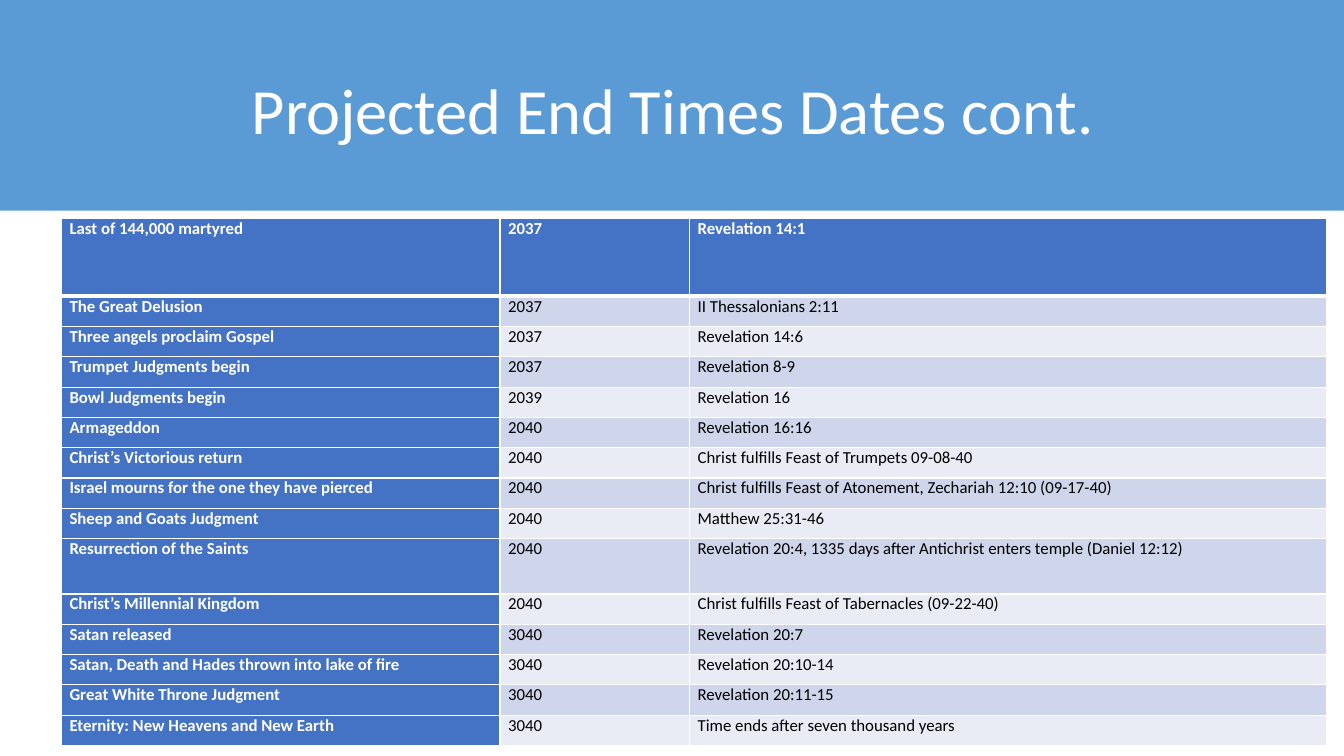
from lxml import etree
from pptx import Presentation
from pptx import util as u
from pptx.dml.color import RGBColor
from pptx.enum import shapes, text
from pptx.oxml import ns

WHITE, BLACK, SKY, BLUE = "FFFFFF", "000000", "5B9BD5", "4472C4"
BANDS = ("E9EBF5", "CFD5EA")
COLS = (4.35, 1.88, 6.32)
TALL = {0: 0.77, 9: 0.55}  # rows higher than the rest
EVENTS = [
    ("Last of 144,000 martyred", "2037", "Revelation 14:1"),
    ("The Great Delusion", "2037", "II Thessalonians 2:11"),
    ("Three angels proclaim Gospel", "2037", "Revelation 14:6"),
    ("Trumpet Judgments begin", "2037", "Revelation 8-9"),
    ("Bowl Judgments begin", "2039", "Revelation 16"),
    ("Armageddon", "2040", "Revelation 16:16"),
    ("Christ’s Victorious return", "2040", "Christ fulfills Feast of Trumpets 09-08-40"),
    ("Israel mourns for the one they have pierced", "2040",
     "Christ fulfills Feast of Atonement, Zechariah 12:10 (09-17-40)"),
    ("Sheep and Goats Judgment", "2040", "Matthew 25:31-46"),
    ("Resurrection of the Saints", "2040",
     "Revelation 20:4, 1335 days after Antichrist enters temple (Daniel 12:12)"),
    ("Christ’s Millennial Kingdom", "2040", "Christ fulfills Feast of Tabernacles (09-22-40)"),
    ("Satan released", "3040", "Revelation 20:7"),
    ("Satan, Death and Hades thrown into lake of fire", "3040", "Revelation 20:10-14"),
    ("Great White Throne Judgment", "3040", "Revelation 20:11-15"),
    ("Eternity: New Heavens and New Earth", "3040", "Time ends after seven thousand years"),
]


def paint(obj, color):
    """Give a fill or a font a solid colour."""
    if hasattr(obj, "solid"):
        obj.solid()
        obj.fore_color.rgb = RGBColor.from_string(color)
    else:
        obj.color.rgb = RGBColor.from_string(color)


def assign(obj, vals):
    for key, val in vals.items():
        setattr(obj, key, val)


def place(box):
    return dict(zip(("left", "top", "width", "height"), map(u.Inches, box)))


def write(frame, words, size, color, bold=False):
    frame.text = words
    font = frame.paragraphs[0].runs[0].font
    assign(font, {"name": "Calibri", "size": u.Pt(size), "bold": bold})
    paint(font, color)


def edge(cell, row):
    """White cell borders, thicker below the first row."""
    wide = {(0, "lnB"): 3, (1, "lnT"): 3}
    props = cell._tc.get_or_add_tcPr()
    for pos, side in enumerate(("lnL", "lnR", "lnT", "lnB")):
        line = etree.Element(ns.qn("a:" + side), w=str(u.Pt(wide.get((row, side), 1))))
        solid = etree.SubElement(line, ns.qn("a:solidFill"))
        etree.SubElement(solid, ns.qn("a:srgbClr"), val=WHITE)
        props.insert(pos, line)


def header(slide, box):
    # Colour band
    band = slide.shapes.add_shape(shapes.MSO_SHAPE.RECTANGLE, *place(box).values())
    band.shadow.inherit = False
    paint(band.fill, SKY)
    band.line.fill.background()

    # Title in front of the band
    title = slide.shapes.title
    left, top, width, height = box
    assign(title, place((left + 0.92, top + 0.4, width - 1.83, height - 0.64)))
    band._element.addnext(title._element)
    write(title.text_frame, "Projected End Times Dates cont.", 46, WHITE)
    assign(title.text_frame, {"vertical_anchor": text.MSO_ANCHOR.MIDDLE, "word_wrap": True})
    assign(title.text_frame.paragraphs[0],
           {"alignment": text.PP_ALIGN.CENTER, "line_spacing": 0.9})


def dates(slide, box):
    grid = slide.shapes.add_table(len(EVENTS), len(COLS), *place(box).values()).table
    for col, width in zip(grid.columns, COLS):
        col.width = u.Inches(width)
    short = (box[3] - sum(TALL.values())) / (len(EVENTS) - len(TALL))
    pad = {"margin_left": u.Inches(0.08), "margin_right": u.Inches(0.08),
           "margin_top": 0, "margin_bottom": 0}

    for row, event in enumerate(EVENTS):
        grid.rows[row].height = u.Inches(TALL.get(row, short))
        for col, words in enumerate(event):
            cell = grid.cell(row, col)
            head = row == 0 or col == 0
            assign(cell, pad)
            write(cell.text_frame, words, 12, WHITE if head else BLACK, head)
            paint(cell.fill, BLUE if head else BANDS[row % 2])
            edge(cell, row)


def main():
    deck = Presentation()
    assign(deck, {"slide_width": u.Inches(13.33), "slide_height": u.Inches(7.5)})
    slide = deck.slides.add_slide(deck.slide_layouts[5])
    header(slide, (0, 0, 13.33, 2.09))
    dates(slide, (0.61, 2.17, sum(COLS), 5.23))
    deck.save("out.pptx")


if __name__ == "__main__":
    main()
